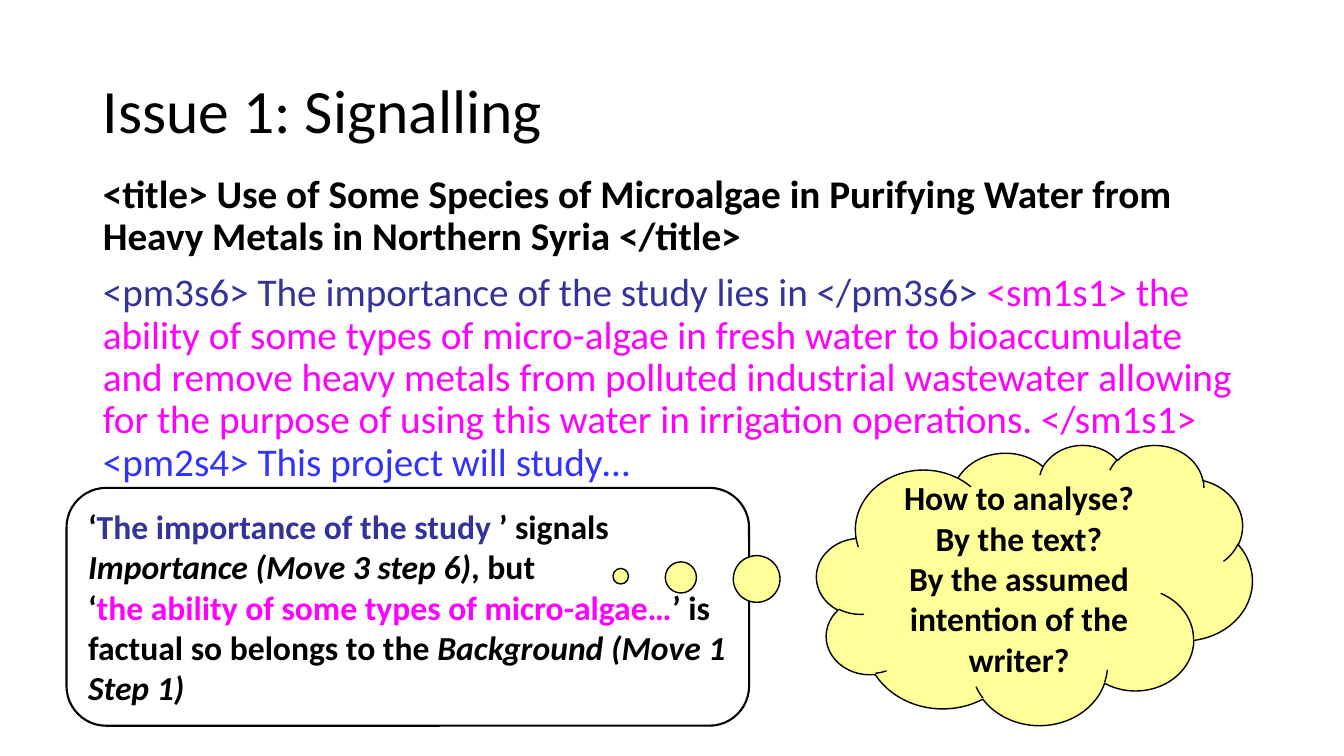
from lxml import etree
from pptx import Presentation
from pptx.dml.color import RGBColor
from pptx.enum.shapes import MSO_SHAPE
from pptx.enum.text import MSO_ANCHOR, MSO_AUTO_SIZE, PP_ALIGN
from pptx.oxml.ns import qn
from pptx.util import Inches, Pt

ROUNDED = MSO_SHAPE.ROUNDED_RECTANGLE
CLOUD = MSO_SHAPE.CLOUD_CALLOUT
LEFT, CENTER = PP_ALIGN.LEFT, PP_ALIGN.CENTER
TOP, MIDDLE = MSO_ANCHOR.TOP, MSO_ANCHOR.MIDDLE

FONT = "Calibri"
COLORS = {
    "black": "000000",
    "navy": "333399",
    "magenta": "FF00FF",
    "blue": "3333FF",
    "yellow": "FFFF99",
}

TITLE = [[("Issue 1: Signalling", "black", "")]]
ABSTRACT = [
    [("<title> Use of Some Species of Microalgae in Purifying Water from "
      "Heavy Metals in Northern Syria </title>", "black", "b")],
    [("<pm3s6> The importance of the study lies in </pm3s6> ", "navy", ""),
     ("<sm1s1> the ability of some types of micro-algae in fresh water to "
      "bioaccumulate and remove heavy metals from polluted industrial "
      "wastewater allowing for the purpose of using this water in irrigation "
      "operations. </sm1s1> ", "magenta", ""),
     (" <pm2s4> This project will study…", "blue", "")],
]
COMMENT = [
    [("‘", "black", "b"),
     ("The importance of the study ", "navy", "b"),
     ("’ signals ", "black", "b"),
     ("Importance (Move 3 step 6)", "black", "bi"),
     (", but", "black", "b")],
    [("‘", "black", "b"),
     ("the ability of some types of micro-algae…", "magenta", "b"),
     ("’ is factual so belongs to the ", "black", "b"),
     ("Background (Move 1 Step 1)", "black", "bi")],
]
QUESTIONS = [
    [("How to analyse?", "black", "b")],
    [("By the text?", "black", "b")],
    [("By the assumed intention of the writer?", "black", "b")],
]


def color(name):
    return RGBColor.from_string(COLORS[name])


def write(shape, paragraphs, size, align=LEFT, anchor=MIDDLE, line=1.0, before=0):
    """Fill a shape with paragraphs made of (text, colour, style) spans."""
    frame = shape.text_frame
    frame.word_wrap = True
    frame.auto_size = MSO_AUTO_SIZE.NONE
    frame.vertical_anchor = anchor
    for index, spans in enumerate(paragraphs):
        para = frame.add_paragraph() if index else frame.paragraphs[0]
        para.alignment = align
        para.line_spacing = line
        para.space_before = Pt(before)
        for text, shade, style in spans:
            span = para.add_run()
            span.text = text
            span.font.name = FONT
            span.font.size = Pt(size)
            span.font.bold = "b" in style
            span.font.italic = "i" in style
            span.font.color.rgb = color(shade)


def place(shape, left, top, width, height):
    shape.left, shape.top = Inches(left), Inches(top)
    shape.width, shape.height = Inches(width), Inches(height)


def remove_bullets(shape):
    for para in shape.text_frame.paragraphs:
        properties = para._p.get_or_add_pPr()
        properties.set("marL", "0")
        properties.set("indent", "0")
        etree.SubElement(properties, qn("a:buNone"))


def add_outlined(page, kind, left, top, width, height, weight, fill=None):
    shape = page.shapes.add_shape(
        kind, Inches(left), Inches(top), Inches(width), Inches(height))
    shape.shadow.inherit = False
    if fill:
        shape.fill.solid()
        shape.fill.fore_color.rgb = color(fill)
    else:
        shape.fill.background()
    shape.line.color.rgb = color("black")
    shape.line.width = Pt(weight)
    return shape


def main():
    deck = Presentation()
    deck.slide_width, deck.slide_height = Inches(13.33), Inches(7.5)
    page = deck.slides.add_slide(deck.slide_layouts[1])

    title, body = page.placeholders
    place(title, 0.92, 0.4, 11.5, 1.45)
    write(title, TITLE, 44, line=0.9)
    place(body, 0.92, 1.68, 11.5, 3.38)
    write(body, ABSTRACT, 28, anchor=TOP, line=0.9, before=10)
    remove_bullets(body)

    comment = add_outlined(page, ROUNDED, 0.66, 4.84, 6.77, 2.36, 1.5)
    write(comment, COMMENT, 24)

    cloud = add_outlined(page, CLOUD, 8.1, 4.41, 4.32, 2.78, 1, "yellow")
    cloud.adjustments[0] = -0.95
    cloud.adjustments[1] = -0.03
    write(cloud, QUESTIONS, 24, align=CENTER)

    deck.save("out.pptx")


if __name__ == "__main__":
    main()
